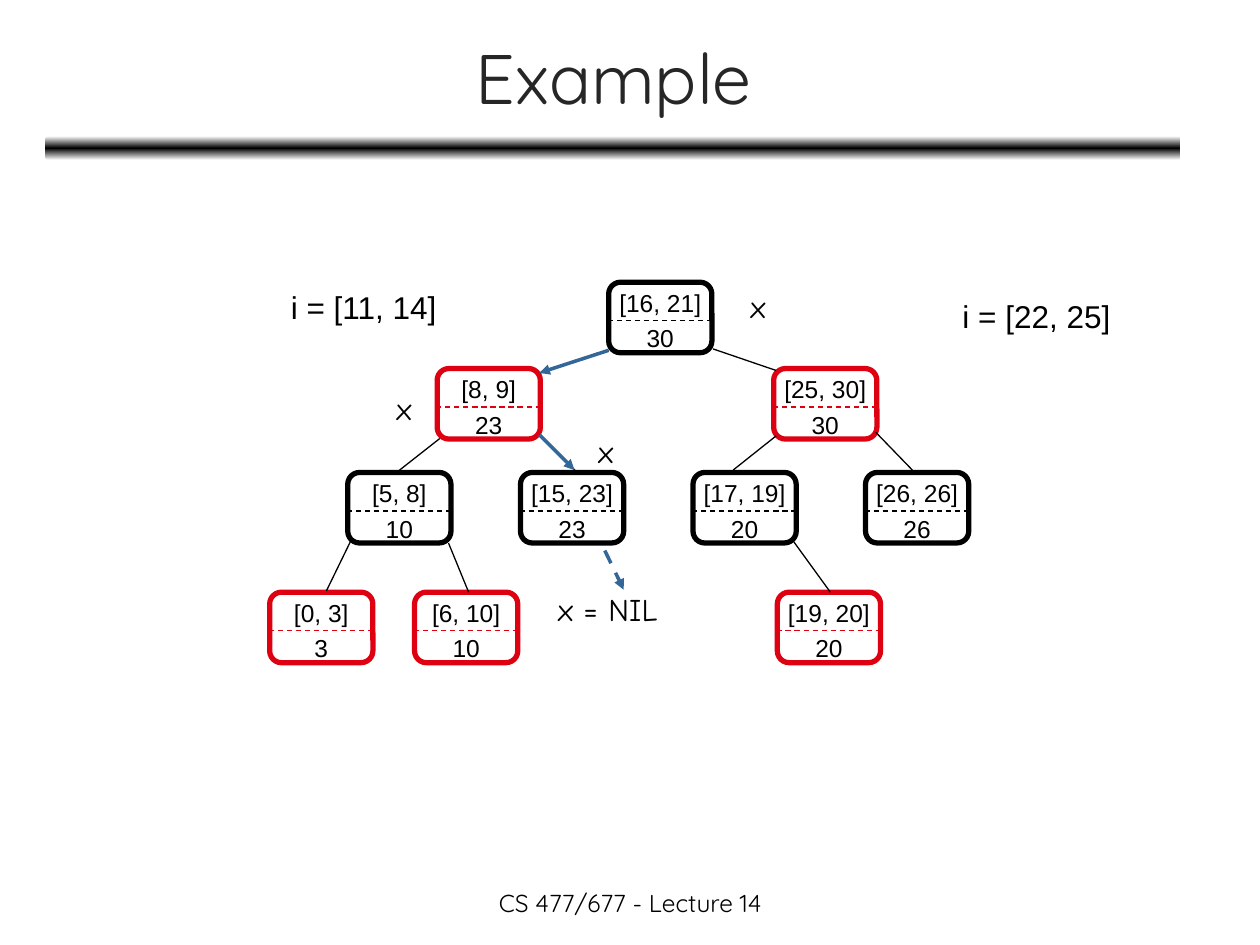
from copy import deepcopy

from lxml.etree import SubElement
from pptx import Presentation
from pptx.dml.color import RGBColor
from pptx.enum.dml import MSO_LINE
from pptx.enum.shapes import MSO_CONNECTOR, MSO_SHAPE
from pptx.enum.text import MSO_ANCHOR, PP_ALIGN
from pptx.oxml.ns import qn
from pptx.util import Pt

BLACK = RGBColor(0, 0, 0)
WHITE = RGBColor(255, 255, 255)
CHARCOAL = RGBColor(0x26, 0x26, 0x26)
RED = RGBColor(0xDD, 0x01, 0x11)
BLUE = RGBColor(0x33, 0x66, 0x99)

# One entry per tree level: top, colour, nodes as (left, interval, maximum)
LEVELS = [
    (161.3, BLACK, [(347.8, "[16, 21]", "30")]),
    (210.6, RED, [(249.8, "[8, 9]", "23"), (442.1, "[25, 30]", "30")]),
    (270, BLACK, [(198.7, "[5, 8]", "10"), (297.4, "[15, 23]", "23"),
                  (396, "[17, 19]", "20"), (494.6, "[26, 26]", "26")]),
    (338.4, RED, [(154.1, "[0, 3]", "3"), (236.9, "[6, 10]", "10"),
                  (444.2, "[19, 20]", "20")]),
]
NODE_W, NODE_H = 59, 40.3
DIVIDER_DROP = 22

EDGES = [
    (347.8, 200.2, 308.9, 213.1), (407.5, 199.4, 443.5, 211.7),
    (251.3, 250.6, 227.5, 269.3), (308.2, 248.4, 330.5, 270.7),
    (443.5, 249.1, 419, 268.6), (500.4, 247, 522, 269.3),
    (200.2, 309.6, 186.5, 337.7), (256.3, 310.3, 267.8, 338.4),
    (453.6, 309.6, 474.5, 338.4),
]
SEARCH_STEPS = [
    (347.8, 200.2, 308.2, 213.1, None),
    (308.2, 248.4, 328.3, 268.6, None),
    (345.6, 314.6, 356.4, 337, MSO_LINE.DASH),
]
# Left, top, width, text, font
LABELS = [
    (159.1, 161.3, 99.4, "i = [11, 14]", "Arial"),
    (542.9, 166.3, 99.4, "i = [22, 25]", "Arial"),
    (421.9, 160.6, 25.2, "x", "Comic Neue"),
    (219.6, 218.9, 25.2, "x", "Comic Neue"),
    (334.8, 243.4, 25.2, "x", "Comic Neue"),
    (311.8, 333.4, 79.2, "x = NIL", "Comic Neue"),
]
LABEL_H = 28.8


def write(frame, *lines, font="Arial", size=18, color=BLACK, align=PP_ALIGN.LEFT,
          anchor=MSO_ANCHOR.TOP, wrap=False, spacing=None):
    frame.word_wrap = wrap
    frame.vertical_anchor = anchor
    for number, line in enumerate(lines):
        paragraph = frame.add_paragraph() if number else frame.paragraphs[0]
        paragraph.alignment = align
        if spacing:
            paragraph.line_spacing = spacing
        run = paragraph.add_run()
        run.text = line
        run.font.name, run.font.size = font, Pt(size)
        run.font.color.rgb = color


def add_text(slide, left, top, width, height, text, **style):
    box = slide.shapes.add_textbox(Pt(left), Pt(top), Pt(width), Pt(height))
    write(box.text_frame, text, **style)


def add_line(slide, x1, y1, x2, y2, color=BLACK, weight=0.75, dash=None, arrow=False):
    line = slide.shapes.add_connector(MSO_CONNECTOR.STRAIGHT, Pt(x1), Pt(y1), Pt(x2), Pt(y2))
    line.line.color.rgb = color
    line.line.width = Pt(weight)
    if dash:
        line.line.dash_style = dash
    properties = line._element.spPr
    if arrow:
        SubElement(properties.find(qn("a:ln")), qn("a:tailEnd"), type="triangle")
    SubElement(properties, qn("a:effectLst"))


def add_round_box(slide, left, top, width, height):
    box = slide.shapes.add_shape(MSO_SHAPE.ROUNDED_RECTANGLE,
                                 Pt(left), Pt(top), Pt(width), Pt(height))
    box.shadow.inherit = False
    return box


def add_node(slide, left, top, color, interval, maximum):
    node = add_round_box(slide, left, top, NODE_W, NODE_H)
    node.fill.background()
    node.line.color.rgb = color
    node.line.width = Pt(3)
    write(node.text_frame, interval, maximum, size=14, align=PP_ALIGN.CENTER,
          anchor=MSO_ANCHOR.MIDDLE, spacing=1.2)
    middle = top + DIVIDER_DROP
    add_line(slide, left - 0.5, middle, left + NODE_W + 0.5, middle, color, dash=MSO_LINE.DASH)


def add_title_rule(slide):
    """Bar that fades from black to white above and below."""
    rule = add_round_box(slide, 25.9, 77.8, 648.7, 13.7)
    rule.line.fill.background()
    rule.fill.gradient()
    rule.fill.gradient_angle = 90
    stop_list = rule._element.spPr.find(qn("a:gradFill")).find(qn("a:gsLst"))
    stop_list.insert(1, deepcopy(stop_list[0]))
    for stop, position, color in zip(rule.fill.gradient_stops, (0, 0.5, 1),
                                     (WHITE, BLACK, WHITE)):
        stop.position = position
        stop.color.rgb = color


def main():
    deck = Presentation()
    deck.slide_width, deck.slide_height = Pt(720), Pt(540)
    slide = deck.slides.add_slide(deck.slide_layouts[6])

    add_title_rule(slide)
    add_text(slide, 26.6, 7.9, 648, 71.3, "Example", font="Quicksand", size=40,
             color=CHARCOAL, align=PP_ALIGN.CENTER, anchor=MSO_ANCHOR.MIDDLE, wrap=True)
    for top, color, nodes in LEVELS:
        for left, interval, maximum in nodes:
            add_node(slide, left, top, color, interval, maximum)
    for edge in EDGES:
        add_line(slide, *edge)
    for *ends, dash in SEARCH_STEPS:
        add_line(slide, *ends, color=BLUE, weight=2, dash=dash, arrow=True)
    for left, top, width, text, font in LABELS:
        add_text(slide, left, top, width, LABEL_H, text, font=font)
    add_text(slide, 246.2, 504, 228.2, 25.2, "CS 477/677 - Lecture 14",
             font="Quicksand", size=14, align=PP_ALIGN.CENTER, wrap=True)

    deck.save("out.pptx")


if __name__ == "__main__":
    main()
